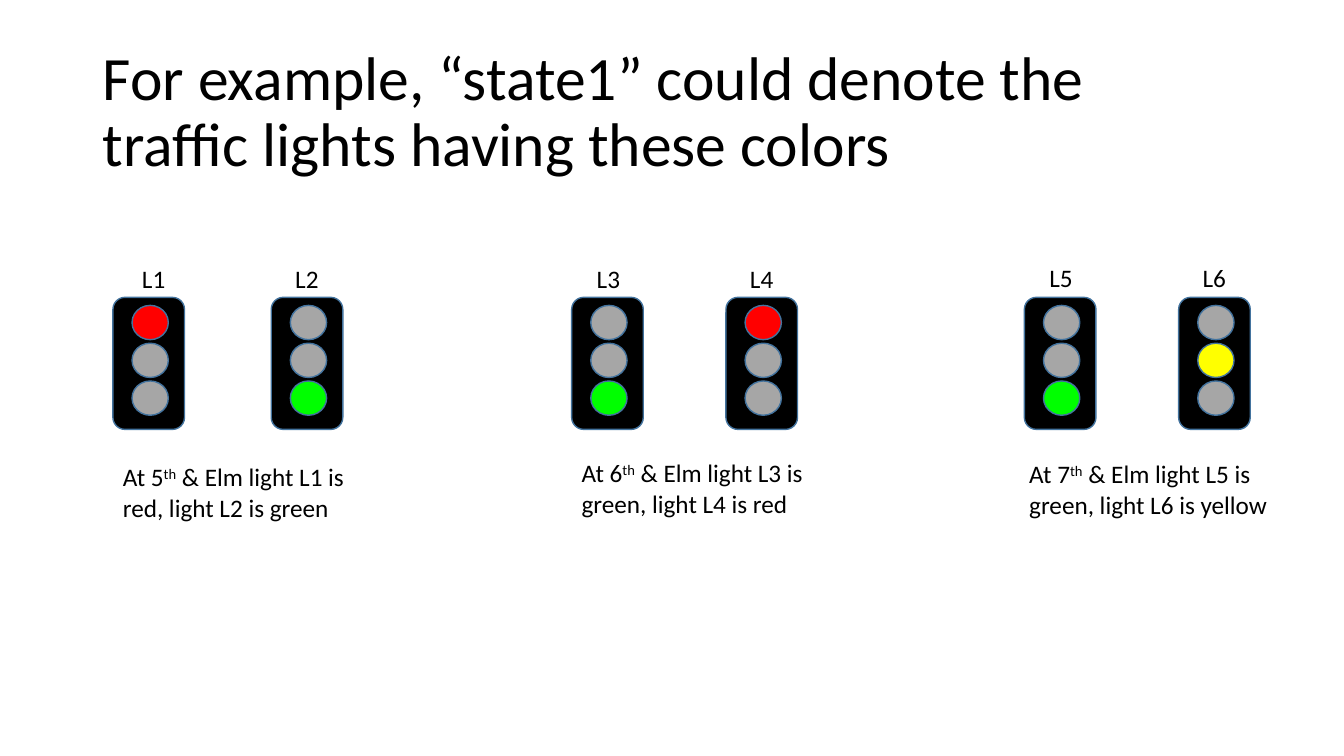
from pptx import Presentation
from pptx.dml.color import RGBColor
from pptx.enum.shapes import MSO_SHAPE
from pptx.enum.text import MSO_ANCHOR, MSO_AUTO_SIZE, PP_ALIGN
from pptx.util import Inches, Pt

ROUND, OVAL = MSO_SHAPE.ROUNDED_RECTANGLE, MSO_SHAPE.OVAL
MIDDLE, LEFT, NO_FIT = MSO_ANCHOR.MIDDLE, PP_ALIGN.LEFT, MSO_AUTO_SIZE.NONE
FONT, BLACK, EDGE, UNLIT = "Calibri", "000000", "43739E", "A6A6A6"
COLORS = {"red": "FF0000", "yellow": "FFFF00", "green": "00FF00"}
LAMPS = list(COLORS)
LIGHT_TOP, LIGHT_W, LIGHT_H = 2.95, 0.71, 1.31
LAMP_W, LAMP_H, LAMP_STEP = 0.36, 0.34, 0.375
LABEL_STEP = 1.52

# Each crossing: street number, first label (left, top),
# caption (left, top, width), lights as (left, lit lamp)
CROSSINGS = [
    (5, (1.31, 2.56), (1.12, 4.53, 2.51), [(1.12, "red"), (2.69, "green")]),
    (6, (5.82, 2.56), (5.67, 4.49, 2.5), [(5.67, "green"), (7.2, "red")]),
    (7, (10.31, 2.55), (10.11, 4.5, 2.57), [(10.16, "green"), (11.69, "yellow")]),
]


def paint(fmt, color):
    fmt.rgb = RGBColor.from_string(color)


def style(para, size):
    para.alignment = LEFT
    for run in para.runs:
        run.font.name, run.font.size = FONT, Pt(size)
        paint(run.font.color, BLACK)


def add_title(slide, text, box):
    title = slide.shapes.title
    title.left, title.top, title.width, title.height = map(Inches, box)
    frame = title.text_frame
    frame.text = text
    frame.vertical_anchor, frame.auto_size = MIDDLE, NO_FIT
    frame.paragraphs[0].line_spacing = 0.9
    style(frame.paragraphs[0], 44)


def add_shape(slide, kind, box, color):
    shape = slide.shapes.add_shape(kind, *map(Inches, box))
    shape.shadow.inherit = False
    shape.fill.solid()
    paint(shape.fill.fore_color, color)
    paint(shape.line.color, EDGE)
    shape.line.width = Pt(1)


def add_text(slide, box, parts, wrap):
    """Place 18 pt text; every second part is superscript."""
    frame = slide.shapes.add_textbox(*map(Inches, box)).text_frame
    frame.word_wrap = wrap
    para = frame.paragraphs[0]
    for i, part in enumerate(parts):
        run = para.add_run()
        run.text = part
        if i % 2:
            run.font._element.set("baseline", "30000")
    style(para, 18)


def add_light(slide, left, lit):
    add_shape(slide, ROUND, (left, LIGHT_TOP, LIGHT_W, LIGHT_H), BLACK)
    for row, lamp in enumerate(LAMPS):
        box = (left + 0.19, LIGHT_TOP + 0.08 + row * LAMP_STEP, LAMP_W, LAMP_H)
        add_shape(slide, OVAL, box, COLORS[lamp] if lamp == lit else UNLIT)


def add_crossing(slide, first, street, label, caption, lights):
    """Draw two labelled lights and the caption below them."""
    states = []
    for i, (left, lit) in enumerate(lights):
        name = f"L{first + i}"
        add_light(slide, left, lit)
        x, y = label
        add_text(slide, (x + i * LABEL_STEP, y, 0.44, 0.4), [name], False)
        states.append(f"light {name} is {lit}")
    parts = [f"At {street}", "th", " & Elm " + ", ".join(states)]
    add_text(slide, (*caption, 0.71), parts, True)


def main():
    deck = Presentation()
    deck.slide_width, deck.slide_height = Inches(13.33), Inches(7.5)
    slide = deck.slides.add_slide(deck.slide_layouts[5])
    add_title(
        slide,
        "For example, “state1” could denote the traffic lights having these colors",
        (0.92, 0.4, 11.5, 1.45),
    )
    for i, crossing in enumerate(CROSSINGS):
        add_crossing(slide, 2 * i + 1, *crossing)
    deck.save("out.pptx")


if __name__ == "__main__":
    main()
